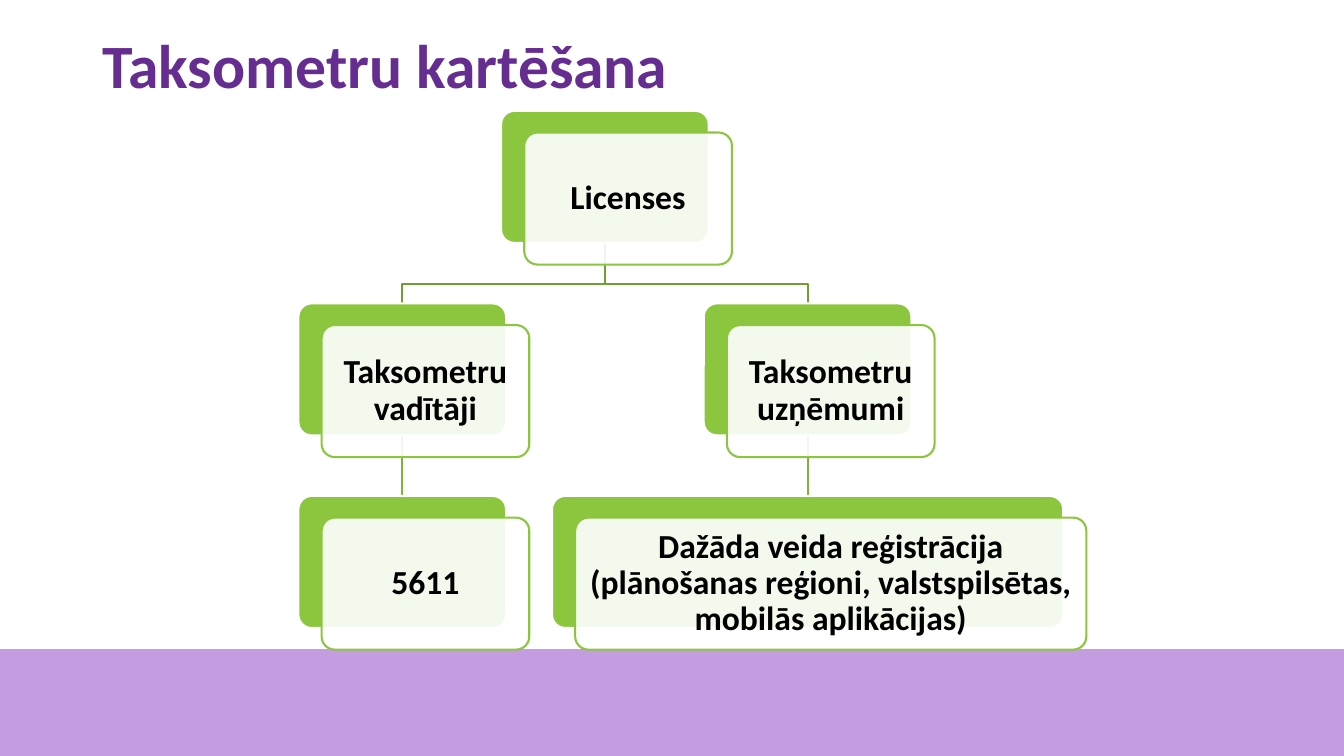
from lxml.etree import SubElement
from pptx import Presentation
from pptx.dml.color import RGBColor
from pptx.enum.shapes import MSO_CONNECTOR as Connector, MSO_SHAPE as Shape
from pptx.enum.text import MSO_ANCHOR as Anchor, PP_ALIGN as Align
from pptx.oxml.ns import qn
from pptx.util import Inches, Pt

# Content: name -> (text, centre x, level, width)
TITLE = "Taksometru kartēšana"
NODES = {
    "licenses": ("Licenses", 6.0, 0, 2.06),
    "drivers": ("Taksometru vadītāji", 3.99, 1, 2.06),
    "driver count": ("5611", 3.99, 2, 2.06),
    "companies": ("Taksometru uzņēmumi", 8.01, 1, 2.06),
    "registration": (
        "Dažāda veida reģistrācija (plānošanas reģioni, valstspilsētas, mobilās aplikācijas)",
        8.01, 2, 5.07),
}
LINKS = [
    ("companies", "registration"),
    ("licenses", "companies"),
    ("drivers", "driver count"),
    ("licenses", "drivers"),
]

THEME = {
    "font": "Calibri", "title size": 44, "node size": 24, "line width": 1.5,
    "title": "662D91", "band": "C49DE1", "card": "8CC63F", "panel": "FFFFFF",
    "text": "000000", "branch": "709F32", "stem": "7FB439",
}

# Layout in inches
TOP, LEVEL_STEP, CARD_HEIGHT = 1.1, 1.91, 1.31
PANEL_DX, PANEL_DY = 0.23, 0.215
BRANCH_DROP = 0.41


def color(name):
    return RGBColor.from_string(THEME[name])


def level_top(level):
    return TOP + level * LEVEL_STEP


def set_line(shape, name):
    shape.line.color.rgb = color(name)
    shape.line.width = Pt(THEME["line width"])


def add_box(slide, kind, left, top, width, height, fill, line=None):
    shape = slide.shapes.add_shape(
        kind, Inches(left), Inches(top), Inches(width), Inches(height))
    shape.shadow.inherit = False
    shape.fill.solid()
    shape.fill.fore_color.rgb = color(fill)
    if line:
        set_line(shape, line)
    else:
        shape.line.fill.background()
    return shape


def write(shape, text, size, name, align):
    frame = shape.text_frame
    frame.word_wrap = True
    frame.vertical_anchor = Anchor.MIDDLE
    paragraph = frame.paragraphs[0]
    paragraph.alignment = align
    paragraph.line_spacing = 0.9
    run = paragraph.add_run()
    run.text = text
    run.font.name = THEME["font"]
    run.font.size = Pt(THEME[size])
    run.font.bold = True
    run.font.color.rgb = color(name)


def add_link(slide, parent, child):
    _, x1, level1, _ = NODES[parent]
    _, x2, level2, _ = NODES[child]
    start, end = level_top(level1) + CARD_HEIGHT, level_top(level2)
    if x1 == x2:
        link = slide.shapes.add_connector(
            Connector.STRAIGHT, Inches(x1), Inches(start), Inches(x2), Inches(end))
        SubElement(link._element.spPr, qn("a:effectLst"))
        set_line(link, "stem")
        return
    bend = start + BRANCH_DROP
    builder = slide.shapes.build_freeform(Inches(x1), Inches(start))
    corners = [(x1, bend), (x2, bend), (x2, end)]
    builder.add_line_segments([(Inches(x), Inches(y)) for x, y in corners], close=False)
    link = builder.convert_to_shape()
    link.shadow.inherit = False
    link.fill.background()
    set_line(link, "branch")


def add_node(slide, text, center, level, width):
    left, top = center - width / 2, level_top(level)
    card = add_box(slide, Shape.ROUNDED_RECTANGLE, left, top,
                   width, CARD_HEIGHT, "card", "panel")
    panel = add_box(slide, Shape.ROUNDED_RECTANGLE, left + PANEL_DX, top + PANEL_DY,
                    width, CARD_HEIGHT, "panel", "card")
    for shape in (card, panel):
        shape.adjustments[0] = 0.1
    # Let the green card show faintly through the panel
    fill = panel._element.spPr.find(qn("a:solidFill"))
    SubElement(fill[0], qn("a:alpha"), val="90000")
    frame = panel.text_frame
    frame.margin_left = frame.margin_right = Inches(0.1)
    frame.margin_top = frame.margin_bottom = Inches(0.1)
    write(panel, text, "node size", "text", Align.CENTER)


def main():
    presentation = Presentation()
    presentation.slide_width, presentation.slide_height = Inches(13.33), Inches(7.5)
    slide = presentation.slides.add_slide(presentation.slide_layouts[6])

    # Footer band and title
    add_box(slide, Shape.RECTANGLE, 0, 6.44, 13.33, 1.06, "band")
    title = slide.shapes.add_textbox(Inches(0.92), Inches(0.08), Inches(11.5), Inches(1.19))
    write(title, TITLE, "title size", "title", Align.LEFT)

    # Hierarchy: links behind cards
    for parent, child in LINKS:
        add_link(slide, parent, child)
    for node in NODES.values():
        add_node(slide, *node)

    presentation.save("out.pptx")


if __name__ == "__main__":
    main()
